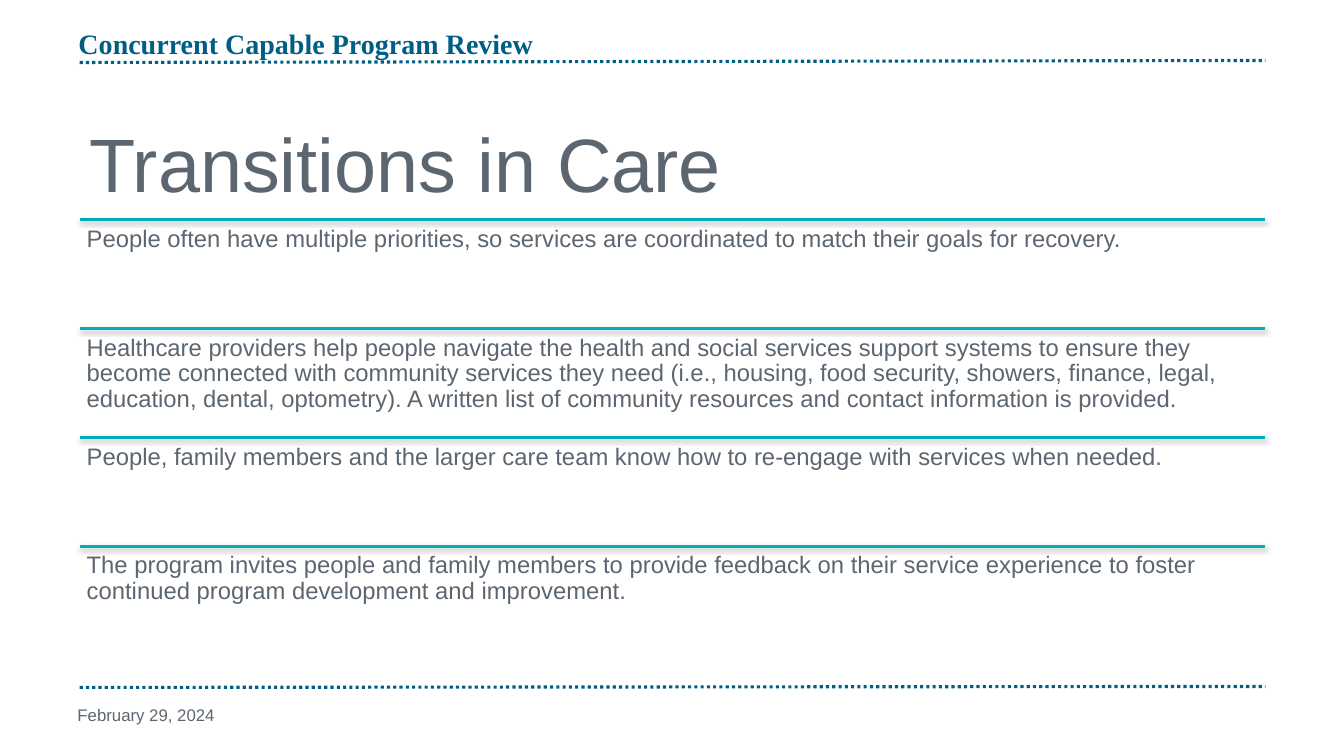
from lxml import etree
from pptx import Presentation
from pptx import util as u
from pptx.dml.color import RGBColor
from pptx.enum import dml, shapes, text
from pptx.oxml.ns import qn

COLORS = {"navy": "005E85", "slate": "5C6670", "teal": "00ADBB", "shadow": "000000"}
LEFT, RIGHT = 0.79, 12.55
WIDTH = RIGHT - LEFT

deck = Presentation()
deck.slide_width, deck.slide_height = u.Inches(13.33), u.Inches(7.5)
slide = deck.slides.add_slide(deck.slide_layouts[6])


def add_rule(start_y, end_y, color, weight):
    rule = slide.shapes.add_connector(
        shapes.MSO_CONNECTOR.STRAIGHT,
        u.Inches(LEFT), u.Inches(start_y), u.Inches(RIGHT), u.Inches(end_y))
    rule.line.color.rgb = RGBColor.from_string(COLORS[color])
    rule.line.width = u.Pt(weight)
    effects = etree.SubElement(rule._element.spPr, qn("a:effectLst"))
    return rule, effects


def add_words(words, box, font, frame, paragraph):
    holder = slide.shapes.add_textbox(*map(u.Inches, box)).text_frame
    holder.word_wrap = True
    line = holder.paragraphs[0]
    run = line.add_run()
    run.text = words
    color = font["color"]
    run.font.color.rgb = RGBColor.from_string(COLORS[color])
    styles = {key: value for key, value in font.items() if key != "color"}
    for target, formats in ((run.font, styles), (holder, frame), (line, paragraph)):
        for name, value in formats.items():
            setattr(target, name, value)


for start_y, end_y in ((0.62, 0.6), (6.82, 6.81)):
    dotted, _ = add_rule(start_y, end_y, "navy", 2.25)
    dotted.line.dash_style = dml.MSO_LINE.ROUND_DOT

middle = {"vertical_anchor": text.MSO_ANCHOR.MIDDLE}
add_words("Concurrent Capable Program Review", (0.68, 0.21, 10.08, 0.33),
          {"name": "Times New Roman", "size": u.Pt(20), "bold": True, "color": "navy"},
          {}, {"space_before": u.Pt(1)})
add_words("February 29, 2024", (0.67, 6.89, 3.11, 0.4),
          {"name": "Arial", "size": u.Pt(12), "color": "slate"},
          middle, {"space_after": u.Pt(6)})
add_words("Transitions in Care", (LEFT, 0.93, WIDTH, 1.25),
          {"name": "Arial", "size": u.Pt(54), "color": "slate"},
          {**middle, "margin_top": u.Inches(0.15)}, {})

practices = [
    "People often have multiple priorities, so services are coordinated to match their goals for recovery.",
    "Healthcare providers help people navigate the health and social services support systems to ensure "
    "they become connected with community services they need (i.e., housing, food security, showers, "
    "finance, legal, education, dental, optometry). A written list of community resources and contact "
    "information is provided.",
    "People, family members and the larger care team know how to re-engage with services when needed.",
    "The program invites people and family members to provide feedback on their service experience to "
    "foster continued program development and improvement.",
]
practice_font = {"name": "Arial", "size": u.Pt(17), "color": "slate"}
practice_frame = {f"margin_{side}": u.Inches(0.07) for side in ("left", "top", "right", "bottom")}
practice_spacing = {"line_spacing": 0.9, "space_after": u.Pt(6)}
row_height = 1.08

for row, practice in enumerate(practices):
    top = 2.18 + row * row_height
    _, effects = add_rule(top, top, "teal", 2)
    shadow = etree.SubElement(effects, qn("a:outerShdw"), blurRad=str(u.Pt(3.1)),
                              dist=str(u.Pt(1.6)), dir="5400000", rotWithShape="0")
    shade = etree.SubElement(shadow, qn("a:srgbClr"), val=COLORS["shadow"])
    etree.SubElement(shade, qn("a:alpha"), val="38000")
    add_words(practice, (LEFT, top, WIDTH, row_height),
              practice_font, practice_frame, practice_spacing)

deck.save("out.pptx")
